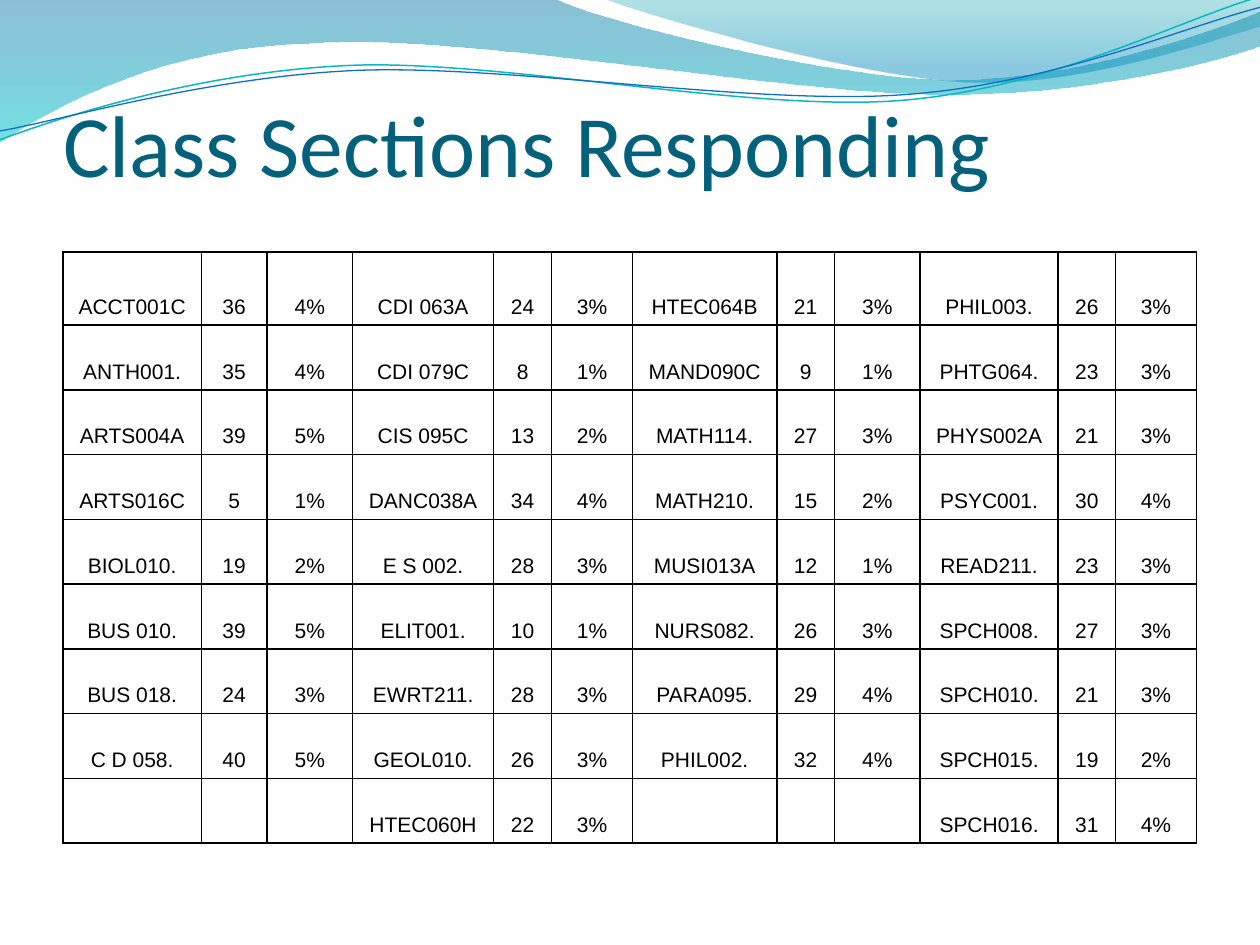
from pptx import Presentation
from pptx.dml.color import RGBColor
from pptx.enum.text import MSO_ANCHOR, MSO_AUTO_SIZE, PP_ALIGN
from pptx.oxml.ns import qn
from pptx.util import Cm, Pt
from lxml.etree import SubElement

BAND = [[(0, 0)], [(11.18, -0.03)],
        [(12.09, 0.43), (16.87, 1.6), (19.25, 1.6)],
        [(21.66, 1.6), (24.33, 0.66), (25.4, 0.23)], [(25.43, 0.91)],
        [(24.97, 1.12), (22.1, 1.93), (18.95, 1.9)],
        [(15.8, 1.9), (9.7, 0.71), (6.53, 0.86)],
        [(3.28, 0.91), (1.17, 2.11), (-0.03, 2.87)]]
CREST = [[(12.17, -0.03)],
         [(12.93, 0.28), (17.32, 1.57), (19.53, 1.65)],
         [(21.74, 1.75), (24.41, 0.81), (25.4, 0.53)], [(25.4, 0)]]
TEAL = [[(0, 2.82)],
        [(1.22, 2.36), (4.01, 1.45), (7.04, 1.32)],
        [(10.03, 1.19), (15.06, 2.26), (18.11, 2.03)],
        [(21.16, 1.8), (23.83, 0.38), (25.35, -0.05)]]
BLUE = [[(0, 2.64)],
        [(1.19, 2.44), (4.17, 1.55), (7.19, 1.42)],
        [(10.24, 1.3), (15.16, 2.13), (18.21, 1.91)],
        [(21.23, 1.7), (23.9, 0.53), (25.4, 0.15)]]

WIDTHS = [2.79, 1.32, 1.73, 2.84, 1.17, 1.63, 2.91, 1.16, 1.73, 2.78, 1.16, 1.63]
COURSES = """\
ACCT001C,36,4%,CDI 063A,24,3%,HTEC064B,21,3%,PHIL003.,26,3%
ANTH001.,35,4%,CDI 079C,8,1%,MAND090C,9,1%,PHTG064.,23,3%
ARTS004A,39,5%,CIS 095C,13,2%,MATH114.,27,3%,PHYS002A,21,3%
ARTS016C,5,1%,DANC038A,34,4%,MATH210.,15,2%,PSYC001.,30,4%
BIOL010.,19,2%,E S 002.,28,3%,MUSI013A,12,1%,READ211.,23,3%
BUS 010.,39,5%,ELIT001.,10,1%,NURS082.,26,3%,SPCH008.,27,3%
BUS 018.,24,3%,EWRT211.,28,3%,PARA095.,29,4%,SPCH010.,21,3%
C D 058.,40,5%,GEOL010.,26,3%,PHIL002.,32,4%,SPCH015.,19,2%
,,,HTEC060H,22,3%,,,,SPCH016.,31,4%"""


def color(code):
    """Turn a hex string into a colour."""
    return RGBColor.from_string(code)


def write(frame, text, font="Arial", size=12, ink="000000", align=PP_ALIGN.LEFT, hang=0):
    """Put one formatted paragraph in a text frame."""
    para = frame.paragraphs[0]
    para.alignment = align
    run = para.add_run()
    run.text = text
    run.font.name, run.font.size = font, Pt(size)
    run.font.color.rgb = color(ink)
    if hang:
        props = para._p.get_or_add_pPr()
        props.set("marL", str(Cm(hang)))
        props.set("indent", str(Cm(-hang)))


def outline(slide, box, steps, close):
    """Draw an outline of straight and cubic steps inside the box."""
    steps = [[(Cm(box[0] + x), Cm(box[1] + y)) for x, y in step] for step in steps]
    ends = [step[-1] for step in steps]
    pen = slide.shapes.build_freeform(*ends[0])
    pen.add_line_segments(ends[1:], close=close)
    shape = pen.convert_to_shape()
    shape.shadow.inherit = False
    for node, step in zip(list(shape.element.iter(qn("a:lnTo"))), steps[1:]):
        if len(step) == 3:
            curve = node.makeelement(qn("a:cubicBezTo"))
            for x, y in step:
                SubElement(curve, qn("a:pt"), x=str(x - shape.left), y=str(y - shape.top))
            node.getparent().replace(node, curve)
    return shape


def waves(slide, box):
    """Draw the shaded waves and the two thin lines over them."""
    for steps, stops in [
        (BAND, [(0, "0074A1", 45), (1, "00C6CF", 55)]),
        (CREST, [(0, "00A1A9", 30), (0.8, "008BBF", 45)]),
    ]:
        shape = outline(slide, box, steps, True)
        shape.line.fill.background()
        shape.fill.gradient()
        shape.fill.gradient_angle = 270
        for stop, (place, code, alpha) in zip(shape.fill.gradient_stops, stops):
            stop.position = place
            stop.color.rgb = color(code)
        tints = list(shape.element.iter(qn("a:srgbClr")))
        for tint, (place, code, alpha) in zip(tints, stops):
            SubElement(tint, qn("a:alpha"), val=str(alpha * 1000))
    for steps, code, width in [(TEAL, "0AB8BF", 0.85), (BLUE, "0F6FC6", 0.75)]:
        shape = outline(slide, box, steps, False)
        shape.fill.background()
        shape.line.color.rgb = color(code)
        shape.line.width = Pt(width)


def heading(slide, box, text):
    """Place the title above the waves."""
    title = slide.shapes.title
    title.element.getparent().append(title.element)
    title.left, title.top, title.width, title.height = map(Cm, box)
    frame = title.text_frame
    frame.margin_left = frame.margin_right = frame.margin_bottom = 0
    frame.margin_top = Cm(0.13)
    frame.vertical_anchor = MSO_ANCHOR.BOTTOM
    frame.word_wrap = True
    frame.auto_size = MSO_AUTO_SIZE.NONE
    write(frame, text, font="Calibri", size=50, ink="04617B")


def border(cell):
    """Give a cell thin black edges."""
    props = cell._tc.get_or_add_tcPr()
    for i, side in enumerate(("a:lnL", "a:lnR", "a:lnT", "a:lnB")):
        line = props.makeelement(qn(side), {"w": str(Pt(1))})
        fill = SubElement(line, qn("a:solidFill"))
        SubElement(fill, qn("a:srgbClr"), val="000000")
        props.insert(i, line)


def grid(slide, box, rows):
    """Fill the table of sections, counts and shares."""
    table = slide.shapes.add_table(len(rows), len(WIDTHS), *map(Cm, box)).table
    table.first_row = table.horz_banding = False
    for column, width in zip(table.columns, WIDTHS):
        column.width = Cm(width)
    for i, (row, texts) in enumerate(zip(table.rows, rows)):
        row.height = Cm((1.31 if i % 2 else 1.3) if i else 1.47)
        for cell, text in zip(row.cells, texts):
            cell.fill.background()
            border(cell)
            if text:
                cell.vertical_anchor = MSO_ANCHOR.BOTTOM
                write(cell.text_frame, text, align=PP_ALIGN.CENTER, hang=0.97)


def main():
    """Build and save the slide."""
    deck = Presentation()
    deck.slide_width, deck.slide_height = Cm(25.4), Cm(19.05)
    slide = deck.slides.add_slide(deck.slide_layouts[5])
    waves(slide, (0, 0))
    heading(slide, (1.27, 0.76, 22.86, 3.18), "Class Sections Responding")
    rows = [line.split(",") for line in COURSES.splitlines()]
    grid(slide, (1.27, 5.08, 22.86, 11.91), rows)
    deck.save("out.pptx")


if __name__ == "__main__":
    main()
